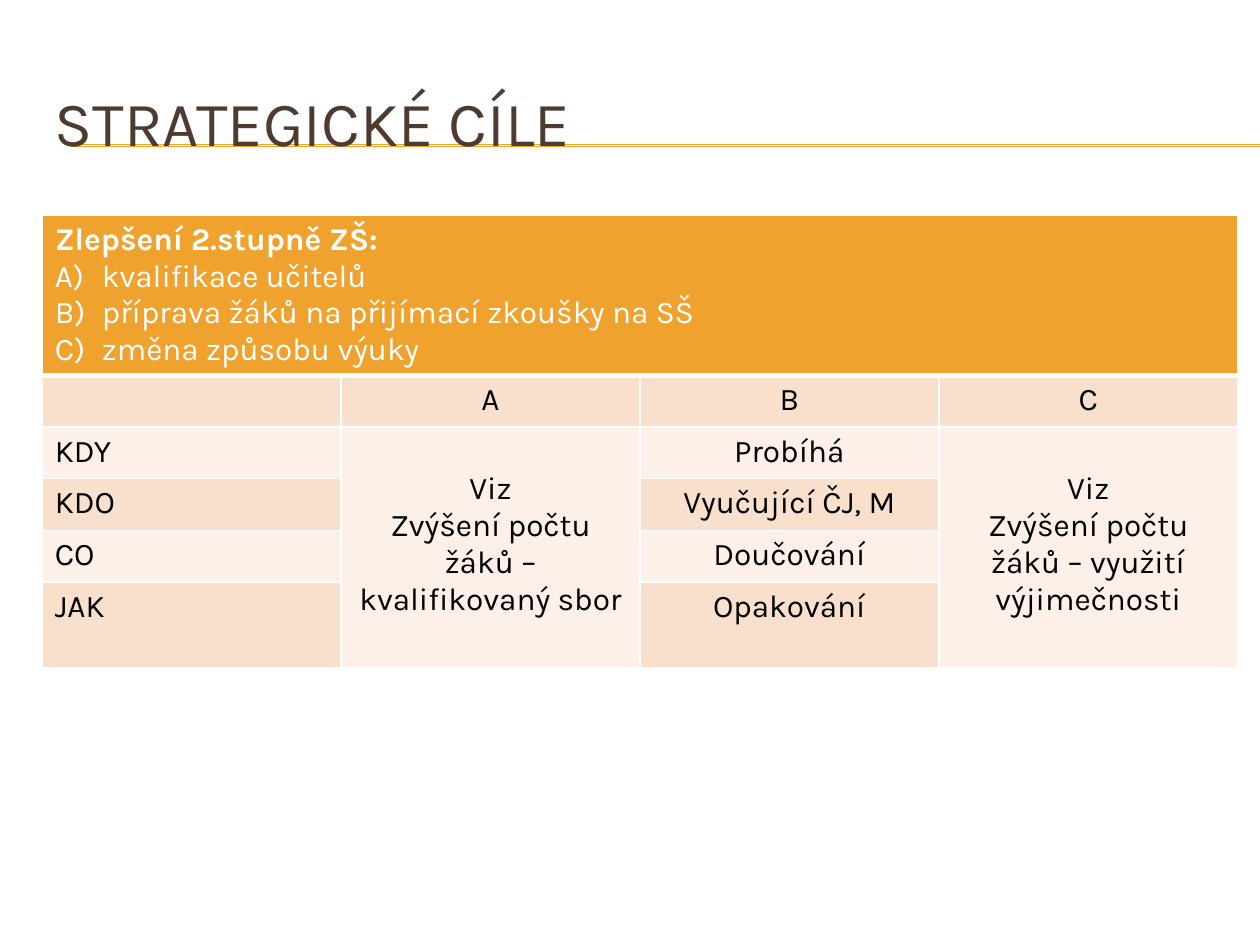
import pptx
import pptx.dml.color
import pptx.enum.shapes
import pptx.enum.text
import pptx.oxml
import pptx.oxml.ns
import pptx.util
from pptx.util import Cm

FONT = "Karla"
ORANGE, PEACH, CREAM = "F0A22E", "F9E0CD", "FCF0E8"
WHITE, BLACK, BROWN = "FFFFFF", "000000", "4E3B30"
LEFT = pptx.enum.text.PP_ALIGN.LEFT
CENTER = pptx.enum.text.PP_ALIGN.CENTER

GOALS = ["kvalifikace učitelů", "příprava žáků na přijímací zkoušky na SŠ",
         "změna způsobu výuky"]
HEADERS = ["A", "B", "C"]
PLAN = [("KDY", "Probíhá"), ("KDO", "Vyučující ČJ, M"),
        ("CO", "Doučování"), ("JAK", "Opakování")]
REFERENCES = {1: ["Viz", "Zvýšení počtu žáků – kvalifikovaný sbor"],
              3: ["Viz", "Zvýšení počtu žáků – využití výjimečnosti"]}


def color(hex_string):
    return pptx.dml.color.RGBColor.from_string(hex_string)


def add_text(frame, text, size=18, fill=BLACK, bold=False, align=LEFT):
    """Fill the first empty paragraph, or append one."""
    paragraph = frame.paragraphs[-1]
    if paragraph.runs:
        paragraph = frame.add_paragraph()
    paragraph.alignment = align
    run = paragraph.add_run()
    run.text = text
    run.font.name = FONT
    run.font.size = pptx.util.Pt(size)
    run.font.bold = bold
    run.font.color.rgb = color(fill)
    return paragraph


def number_with_letters(paragraph, indent):
    properties = paragraph._p.get_or_add_pPr()
    properties.set("marL", str(indent))
    properties.set("indent", str(-indent))
    properties.append(pptx.oxml.parse_xml(
        f'<a:buFont {pptx.oxml.ns.nsdecls("a")} typeface="+mj-lt"/>'))
    properties.append(pptx.oxml.parse_xml(
        f'<a:buAutoNum {pptx.oxml.ns.nsdecls("a")} type="alphaUcParenR"/>'))


def format_cell(cell, fill, top=1, bottom=1):
    cell.fill.solid()
    cell.fill.fore_color.rgb = color(fill)
    properties = cell._tc.get_or_add_tcPr()
    sides = [("L", 1), ("R", 1), ("T", top), ("B", bottom)]
    for position, (side, width) in enumerate(sides):
        properties.insert(position, pptx.oxml.parse_xml(
            f'<a:ln{side} {pptx.oxml.ns.nsdecls("a")} w="{pptx.util.Pt(width)}">'
            f'<a:solidFill><a:srgbClr val="{WHITE}"/></a:solidFill></a:ln{side}>'))


def add_title(slide, left, top, width, height):
    title = slide.shapes.title
    title.left, title.top, title.width, title.height = left, top, width, height
    frame = title.text_frame
    frame.word_wrap = True
    frame.auto_size = pptx.enum.text.MSO_AUTO_SIZE.NONE
    frame.vertical_anchor = pptx.enum.text.MSO_ANCHOR.MIDDLE
    add_text(frame, "STRATEGICKÉ CÍLE", size=36, fill=BROWN)

    # Double rule behind the title, running to the slide edge
    for offset in (Cm(1.65), Cm(1.68)):
        rule = slide.shapes.add_connector(
            pptx.enum.shapes.MSO_CONNECTOR.STRAIGHT,
            left + Cm(0.58), top + offset, Cm(25.4), top + offset)
        rule.line.color.rgb = color(ORANGE)
        rule.line.width = pptx.util.Pt(0.75)
        rule.element.spPr.append(pptx.oxml.parse_xml(
            f'<a:effectLst {pptx.oxml.ns.nsdecls("a")}/>'))
        title.element.addprevious(rule.element)


def add_plan_table(slide, left, top, width):
    heights = [Cm(3.24)] + [Cm(1.04)] * 4 + [Cm(1.73)]
    table = slide.shapes.add_table(
        len(heights), 4, left, top, width, sum(heights)).table
    table.first_row = table.horz_banding = False
    for column in table.columns:
        column.width = width // 4

    # Row heights, banded fills and borders
    for index, height in enumerate(heights):
        table.rows[index].height = height
        band = ORANGE if index == 0 else PEACH if index % 2 else CREAM
        for column in range(4):
            merged = index > 1 and column in REFERENCES
            format_cell(table.cell(index, column), CREAM if merged else band,
                        top=3 if index == 1 else 1,
                        bottom=3 if index == 0 else 1)

    # Goals across the top
    table.cell(0, 0).merge(table.cell(0, 3))
    frame = table.cell(0, 0).text_frame
    add_text(frame, "Zlepšení 2.stupně ZŠ:", fill=WHITE, bold=True)
    for goal in GOALS:
        number_with_letters(add_text(frame, goal, fill=WHITE), Cm(0.95))

    # Column headers, row labels and the plan for goal B
    for column, header in enumerate(HEADERS, start=1):
        add_text(table.cell(1, column).text_frame, header, align=CENTER)
    for row, (label, plan) in enumerate(PLAN, start=2):
        add_text(table.cell(row, 0).text_frame, label)
        add_text(table.cell(row, 2).text_frame, plan, align=CENTER)

    # Merged references for goals A and C
    for column, lines in REFERENCES.items():
        cell = table.cell(2, column)
        cell.merge(table.cell(5, column))
        cell.margin_top = Cm(0.87)
        for line in lines:
            add_text(cell.text_frame, line, align=CENTER)


def main():
    presentation = pptx.Presentation()
    presentation.slide_width, presentation.slide_height = Cm(25.4), Cm(19.05)
    slide = presentation.slides.add_slide(presentation.slide_layouts[5])
    add_title(slide, Cm(0.85), Cm(1.27), Cm(24.1), Cm(2.34))
    add_plan_table(slide, Cm(0.85), Cm(4.33), Cm(24.1))
    presentation.save("out.pptx")


if __name__ == "__main__":
    main()
